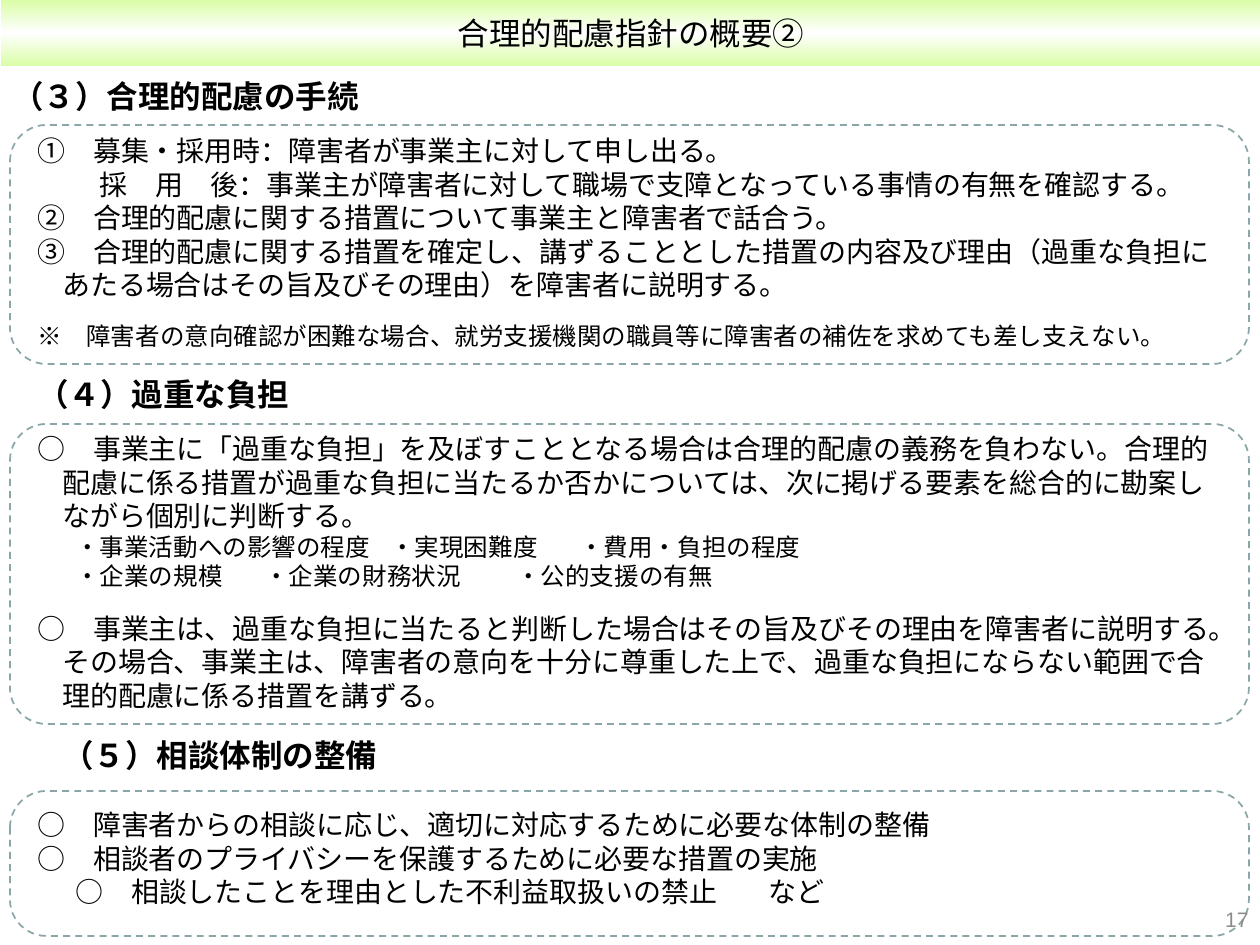
from copy import deepcopy

from pptx import Presentation
from pptx.dml.color import RGBColor
from pptx.enum.dml import MSO_LINE
from pptx.enum.shapes import MSO_SHAPE as Form
from pptx.enum.text import MSO_ANCHOR as Anchor, PP_ALIGN as Align
from pptx.oxml.ns import qn
from pptx.oxml.xmlchemy import OxmlElement as Node
from pptx.util import Pt

PX = 914400 // 126
KANJI = "Noto Sans CJK JP"
LATIN = "Arial"
PITCH = {18: 21, 16: 19.1, 14: 16.6}


def px(num):
    return num * PX


def tint(code):
    return RGBColor.from_string(code)


class Deck:
    ink = "000000"
    edge = "8AA6A8"
    lime = "DAFDA7"
    grey = "8C8C8C"

    def __init__(self):
        self.file = Presentation()
        self.file.slide_width = px(1260)
        self.file.slide_height = px(945)
        self.page = self.file.slides.add_slide(self.file.slide_layouts[6])

    def font(self, para, size, hue, bold=False, face=LATIN):
        for run in para.runs:
            run.font.size = Pt(size)
            run.font.bold = bold
            run.font.name = face
            run.font.color.rgb = tint(hue)
            east = Node("a:ea")
            east.set("typeface", KANJI)
            run.font._element.find(qn("a:latin")).addnext(east)

    def indent(self, para, left, hang, tabs):
        prop = para._p.get_or_add_pPr()
        prop.set("marL", str(px(left)))
        prop.set("indent", str(px(-hang)))
        if tabs:
            stops = Node("a:tabLst")
            for spot in tabs:
                stop = Node("a:tab")
                stop.set("pos", str(px(spot)))
                stop.set("algn", "l")
                stops.append(stop)
            prop.append(stops)

    def text(self, box):
        frame = self.page.shapes.add_textbox(*map(px, box)).text_frame
        frame.word_wrap = True
        return frame

    def body(self, box, rows):
        frame = self.text(box)
        frame.text = "\n".join(row[0] for row in rows)
        for para, (_, size, gap, left, hang, *tabs) in zip(frame.paragraphs, rows):
            para.line_spacing = Pt(PITCH[size])
            para.space_before = Pt(gap)
            self.indent(para, left, hang, tabs)
            face = KANJI if size == 14 else LATIN
            self.font(para, size, self.ink, size == 18, face)

    def shape(self, form, box):
        item = self.page.shapes.add_shape(form, *map(px, box))
        item.shadow.inherit = False
        return item

    def title(self, box, words):
        bar = self.shape(Form.RECTANGLE, box)
        bar.line.fill.background()
        bar.fill.gradient()
        bar.fill.gradient_angle = 90
        stops = bar.fill.gradient_stops
        for stop, spot in zip(stops, (0, 1)):
            stop.color.rgb = tint(self.lime)
            stop.position = spot
        first = bar._element.spPr.find(".//" + qn("a:gs"))
        first.addnext(deepcopy(first))
        mid = bar.fill.gradient_stops[1]
        mid.position = 0.5
        mid.color.rgb = tint("FFFFFF")
        frame = bar.text_frame
        frame.margin_left = frame.margin_right = 0
        frame.margin_top = frame.margin_bottom = 0
        frame.vertical_anchor = Anchor.MIDDLE
        frame.text = words
        para = frame.paragraphs[0]
        para.alignment = Align.CENTER
        self.font(para, 18, self.ink)

    def panel(self, top, high):
        item = self.shape(Form.ROUNDED_RECTANGLE, (10, top, 1239, high))
        item.adjustments[0] = 36.5 / high
        item.fill.background()
        item.line.color.rgb = tint(self.edge)
        item.line.width = Pt(1)
        item.line.dash_style = MSO_LINE.DASH

    def number(self, box, words):
        frame = self.text(box)
        frame.text = words
        para = frame.paragraphs[0]
        para.alignment = Align.RIGHT
        self.font(para, 12, self.grey)


COLS = 122, 466, 737
ROWS = [
    ("（３）合理的配慮の手続", 18, 0, 0, 0),
    ("①　募集・採用時：障害者が事業主に対して申し出る。", 16, 11, 25, 0),
    ("採　用　後：事業主が障害者に対して職場で支障となっている事情の有無を確認する。", 16, 0, 87, 0),
    ("②　合理的配慮に関する措置について事業主と障害者で話合う。", 16, 0, 25, 0),
    ("③　合理的配慮に関する措置を確定し、講ずることとした措置の内容及び理由（過重な負担に"
     "あたる場合はその旨及びその理由）を障害者に説明する。", 16, 0, 50, 25),
    ("※　障害者の意向確認が困難な場合、就労支援機関の職員等に障害者の補佐を求めても差し支えない。",
     14, 11.5, 25, 0),
    ("（４）過重な負担", 18, 14.5, 25, 0),
    ("○　事業主に「過重な負担」を及ぼすこととなる場合は合理的配慮の義務を負わない。合理的"
     "配慮に係る措置が過重な負担に当たるか否かについては、次に掲げる要素を総合的に勘案し"
     "ながら個別に判断する。", 16, 11, 50, 25),
    ("\t・事業活動への影響の程度\t・実現困難度\t・費用・負担の程度", 14, 0, 0, 0, *COLS),
    ("\t・企業の規模\t・企業の財務状況\t・公的支援の有無", 14, 0, 0, 0, *COLS),
    ("○　事業主は、過重な負担に当たると判断した場合はその旨及びその理由を障害者に説明す"
     "る。その場合、事業主は、障害者の意向を十分に尊重した上で、過重な負担にならない範囲"
     "で合理的配慮に係る措置を講ずる。", 16, 12, 50, 25),
    ("（５）相談体制の整備", 18, 14.5, 50, 0),
    ("○　障害者からの相談に応じ、適切に対応するために必要な体制の整備", 16, 19.5, 50, 25),
    ("○　相談者のプライバシーを保護するために必要な措置の実施", 16, 0, 50, 25),
    ("\t○　相談したことを理由とした不利益取扱いの禁止\tなど", 16, 0, 0, 0, 25, 1059),
]


def main():
    deck = Deck()
    deck.body((0, 72, 1239, 861), ROWS)
    deck.title((1, 0, 1260, 66), "合理的配慮指針の概要②")
    for top, high in ((125, 239), (424, 300), (791, 145)):
        deck.panel(top, high)
    deck.number((968, 900, 293, 50), "17")
    deck.file.save("out.pptx")


if __name__ == "__main__":
    main()
